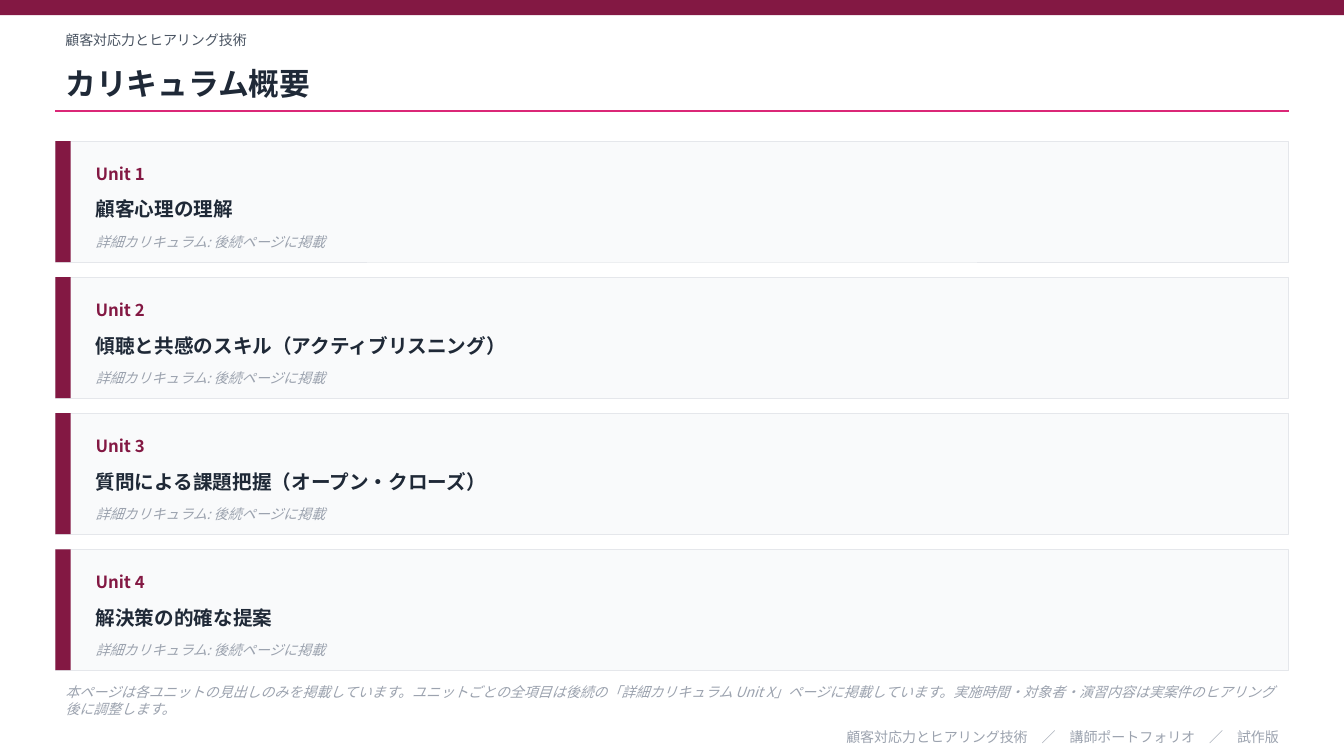
from dataclasses import dataclass

import lxml.etree
import pptx
import pptx.dml.color
import pptx.enum.shapes
import pptx.enum.text
import pptx.oxml.ns
import pptx.slide
import pptx.util

Inches = pptx.util.Inches
Pt = pptx.util.Pt
RGBColor = pptx.dml.color.RGBColor
Align = pptx.enum.text.PP_ALIGN

WINE = RGBColor(0x83, 0x18, 0x43)
PINK = RGBColor(0xDB, 0x27, 0x77)
INK = RGBColor(0x1F, 0x29, 0x37)
SLATE = RGBColor(0x4B, 0x55, 0x63)
GRAY = RGBColor(0x9C, 0xA3, 0xAF)
PALE = RGBColor(0xF9, 0xFA, 0xFB)
EDGE = RGBColor(0xE5, 0xE7, 0xEB)

FACE = "Noto Sans CJK JP"
WIDE = 13.33
LEFT = 0.55
SPAN = 12.23
TOP = 1.4
HIGH = 1.2
STEP = 1.35
INDENT = 0.3
INNER = 11.73


@dataclass(frozen=True)
class Box:
    left: float
    top: float
    width: float
    height: float

    def place(self) -> tuple[pptx.util.Length, ...]:
        return tuple(Inches(n) for n in (self.left, self.top, self.width, self.height))


@dataclass(frozen=True)
class Style:
    size: int
    color: RGBColor
    bold: bool = False
    italic: bool = False
    align: Align = Align.LEFT


@dataclass(frozen=True)
class Label:
    text: str
    box: Box
    style: Style


TOPIC = Style(10, SLATE)
TITLE = Style(22, INK, bold=True)
UNIT = Style(12, WINE, bold=True)
HEAD = Style(14, INK, bold=True)
NOTE = Style(10, GRAY, italic=True)
FOOT = Style(10, GRAY, align=Align.RIGHT)

UNITS = (
    "顧客心理の理解",
    "傾聴と共感のスキル（アクティブリスニング）",
    "質問による課題把握（オープン・クローズ）",
    "解決策の的確な提案",
)

LABELS = (
    Label("顧客対応力とヒアリング技術", Box(LEFT, 0.25, SPAN, 0.3), TOPIC),
    Label("カリキュラム概要", Box(LEFT, 0.55, SPAN, 0.55), TITLE),
    Label(
        "本ページは各ユニットの見出しのみを掲載しています。"
        "ユニットごとの全項目は後続の「詳細カリキュラム Unit X」ページに掲載しています。"
        "実施時間・対象者・演習内容は実案件のヒアリング後に調整します。",
        Box(LEFT, 6.75, SPAN, 0.4),
        NOTE,
    ),
    Label(
        "顧客対応力とヒアリング技術　／　講師ポートフォリオ　／　試作版",
        Box(LEFT, 7.2, SPAN, 0.22),
        FOOT,
    ),
)


def add_rect(slide: pptx.slide.Slide, box: Box, fill: RGBColor, edge: RGBColor | None = None) -> None:
    kind = pptx.enum.shapes.MSO_SHAPE.RECTANGLE
    shape = slide.shapes.add_shape(kind, *box.place())
    shape.shadow.inherit = False
    shape.fill.solid()
    shape.fill.fore_color.rgb = fill
    if edge is None:
        shape.line.fill.background()
    else:
        shape.line.color.rgb = edge
        shape.line.width = Pt(0.5)


def add_label(slide: pptx.slide.Slide, label: Label) -> None:
    style = label.style
    frame = slide.shapes.add_textbox(*label.box.place()).text_frame
    frame.word_wrap = True
    frame.vertical_anchor = pptx.enum.text.MSO_ANCHOR.MIDDLE
    para = frame.paragraphs[0]
    para.alignment = style.align
    run = para.add_run()
    run.text = label.text
    run.font.color.rgb = style.color
    form = {"name": FACE, "size": Pt(style.size), "bold": style.bold, "italic": style.italic}
    for key, value in form.items():
        setattr(run.font, key, value)
    props = run._r.get_or_add_rPr()
    lxml.etree.SubElement(props, pptx.oxml.ns.qn("a:ea"), typeface=FACE)


def add_rule(slide: pptx.slide.Slide, top: float) -> None:
    kind = pptx.enum.shapes.MSO_CONNECTOR.STRAIGHT
    ends = (Inches(n) for n in (LEFT, top, LEFT + SPAN, top))
    rule = slide.shapes.add_connector(kind, *ends)
    rule.line.color.rgb = PINK
    rule.line.width = Pt(1)
    lxml.etree.SubElement(rule._element.spPr, pptx.oxml.ns.qn("a:effectLst"))


def add_card(slide: pptx.slide.Slide, index: int, name: str) -> None:
    top = TOP + index * STEP
    left = LEFT + INDENT
    add_rect(slide, Box(LEFT, top, SPAN, HIGH), PALE, EDGE)
    add_rect(slide, Box(LEFT, top, 0.15, HIGH), WINE)
    for label in (
        Label(f"Unit {index + 1}", Box(left, top + 0.12, 1.5, 0.4), UNIT),
        Label(name, Box(left, top + 0.45, INNER, 0.45), HEAD),
        Label("詳細カリキュラム: 後続ページに掲載", Box(left, top + 0.85, INNER, 0.3), NOTE),
    ):
        add_label(slide, label)


def main() -> None:
    deck = pptx.Presentation()
    deck.slide_width = Inches(WIDE)
    deck.slide_height = Inches(7.5)
    slide = deck.slides.add_slide(deck.slide_layouts[6])
    add_rect(slide, Box(0, 0, WIDE, 0.15), WINE)
    add_rule(slide, 1.1)
    for index, name in enumerate(UNITS):
        add_card(slide, index, name)
    for label in LABELS:
        add_label(slide, label)
    deck.save("out.pptx")


if __name__ == "__main__":
    main()
